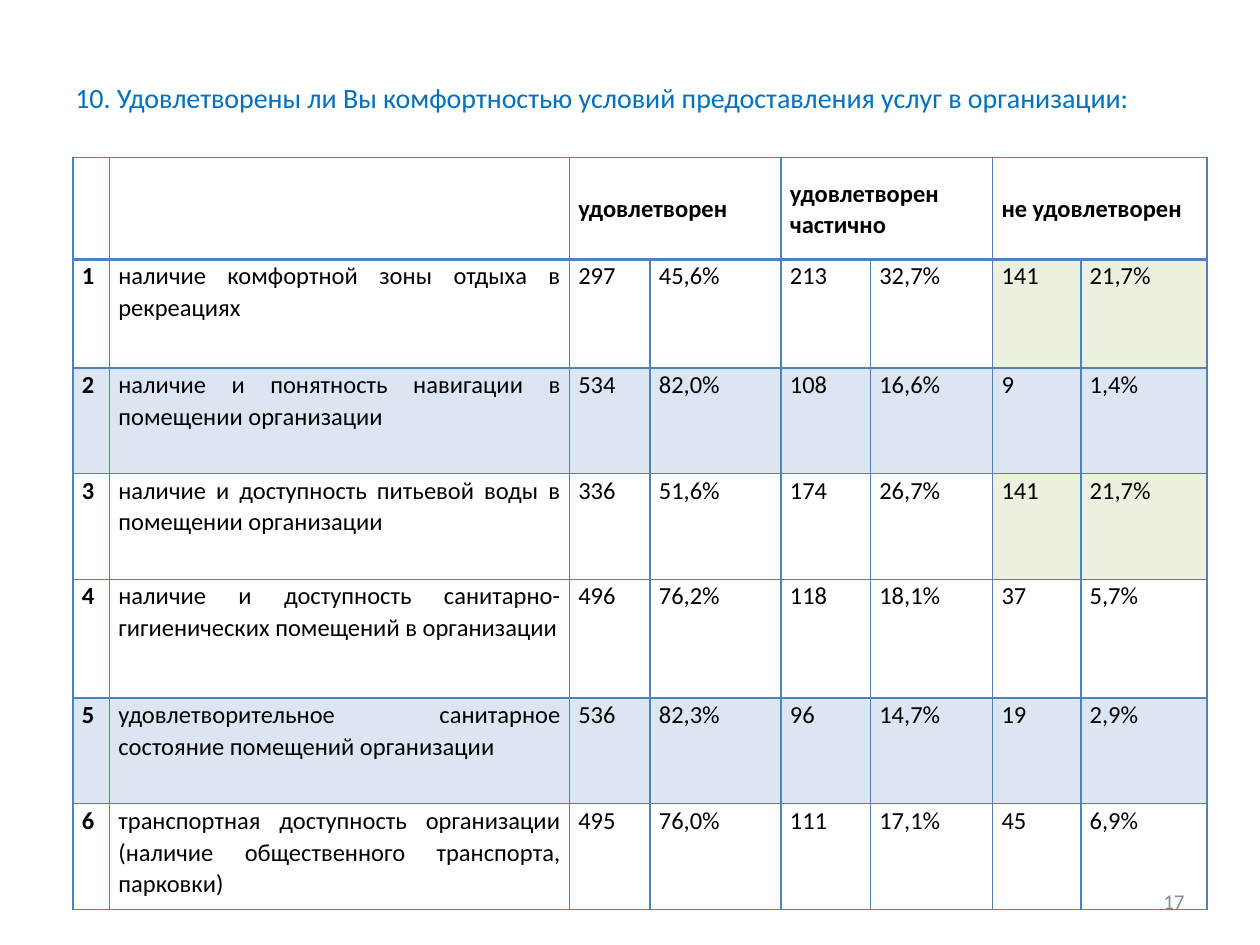
from dataclasses import dataclass

from lxml.etree import SubElement
from pptx import Presentation
from pptx.dml.color import RGBColor
from pptx.enum.text import MSO_ANCHOR, PP_ALIGN
from pptx.oxml.ns import qn
from pptx.util import Inches, Pt

FONT = "Calibri"
BLACK = "000000"
BORDER = "4F81BD"
BLUE_BAND = "DCE6F2"
GREEN_MARK = "EBF1DE"

COLUMN_WIDTHS = (0.29, 3.65, 0.64, 1.04, 0.71, 0.97, 0.7, 1)
ROW_HEIGHTS = (0.81, 0.86, 0.84, 0.84, 0.94, 0.84, 0.84)
ANSWERS = ("удовлетворен", "удовлетворен частично", "не удовлетворен")
FIRST_ANSWER_COLUMN = 2


@dataclass
class Criterion:
    name: str
    counts: tuple[int, int, int]
    band: str | None = None
    mark: str | None = None  # fill of the "not satisfied" cells


CRITERIA = (
    Criterion("наличие комфортной зоны отдыха в рекреациях",
              (297, 213, 141), mark=GREEN_MARK),
    Criterion("наличие и понятность навигации в помещении организации",
              (534, 108, 9), band=BLUE_BAND),
    Criterion("наличие и доступность питьевой воды в помещении организации",
              (336, 174, 141), mark=GREEN_MARK),
    Criterion("наличие и доступность санитарно-гигиенических помещений в организации",
              (496, 118, 37)),
    Criterion("удовлетворительное санитарное состояние помещений организации",
              (536, 96, 19), band=BLUE_BAND),
    Criterion("транспортная доступность организации (наличие общественного транспорта, парковки)",
              (495, 111, 45)),
)


def color(value: str) -> RGBColor:
    return RGBColor.from_string(value)


def add_span(para, text: str, size: float, tint: str, bold: bool = False) -> None:
    span = para.add_run()
    span.text = text
    span.font.name = FONT
    span.font.size = Pt(size)
    span.font.bold = bold
    span.font.color.rgb = color(tint)


def add_text_box(page, left: float, top: float, width: float, height: float,
                 text: str, size: float, tint: str, alignment) -> None:
    box = page.shapes.add_textbox(Inches(left), Inches(top), Inches(width), Inches(height))
    frame = box.text_frame
    frame.word_wrap = True
    frame.vertical_anchor = MSO_ANCHOR.MIDDLE
    para = frame.paragraphs[0]
    para.alignment = alignment
    add_span(para, text, size, tint)


def set_borders(cell, top: float = 1, bottom: float = 1) -> None:
    properties = cell._tc.get_or_add_tcPr()
    for side, width in (("L", 1), ("R", 1), ("T", top), ("B", bottom)):
        line = SubElement(properties, qn(f"a:ln{side}"), w=str(Pt(width)))
        fill = SubElement(line, qn("a:solidFill"))
        SubElement(fill, qn("a:srgbClr"), val=BORDER)


def set_fill(cell, tint: str | None) -> None:
    if tint:
        cell.fill.solid()
        cell.fill.fore_color.rgb = color(tint)
    else:
        cell.fill.background()


def write_cell(cell, text: str, bold: bool = False, anchor=MSO_ANCHOR.TOP) -> None:
    cell.margin_left = cell.margin_right = Inches(0.07)
    cell.margin_top = cell.margin_bottom = 0
    cell.vertical_anchor = anchor
    para = cell.text_frame.paragraphs[0]
    para.alignment = PP_ALIGN.JUSTIFY
    para.line_spacing = 1.07
    para.space_after = Pt(8)
    add_span(para, text, 14, BLACK, bold)


def fill_header(table) -> None:
    for cell in table.rows[0].cells:
        set_borders(cell, bottom=2)
        set_fill(cell, None)
    for index, answer in enumerate(ANSWERS):
        column = FIRST_ANSWER_COLUMN + 2 * index
        cell = table.cell(0, column)
        cell.merge(table.cell(0, column + 1))
        write_cell(cell, answer, bold=True, anchor=MSO_ANCHOR.MIDDLE)


def fill_criterion(table, number: int, criterion: Criterion) -> None:
    total = sum(criterion.counts)
    texts = [str(number), criterion.name]
    for count in criterion.counts:
        share = f"{100 * count / total:.1f}%".replace(".", ",")
        texts += [str(count), share]
    marked_from = len(texts) - 2
    for column, text in enumerate(texts):
        cell = table.cell(number, column)
        set_borders(cell, top=2 if number == 1 else 1)
        marked = criterion.mark and column >= marked_from
        set_fill(cell, criterion.mark if marked else criterion.band)
        write_cell(cell, text, bold=column == 0)


def add_results_table(page) -> None:
    frame = page.shapes.add_table(len(ROW_HEIGHTS), len(COLUMN_WIDTHS),
                                  Inches(0.58), Inches(1.25), Inches(9), Inches(5.95))
    table = frame.table
    for column, width in zip(table.columns, COLUMN_WIDTHS):
        column.width = Inches(width)
    for row, height in zip(table.rows, ROW_HEIGHTS):
        row.height = Inches(height)
    fill_header(table)
    for number, criterion in enumerate(CRITERIA, start=1):
        fill_criterion(table, number, criterion)


def main() -> None:
    deck = Presentation()
    deck.slide_width, deck.slide_height = Inches(10), Inches(7.5)
    page = deck.slides.add_slide(deck.slide_layouts[6])

    # Question
    add_text_box(page, 0.5, 0.3, 9, 0.95,
                 "10. Удовлетворены ли Вы комфортностью условий предоставления услуг в организации:",
                 16, "0070C0", PP_ALIGN.JUSTIFY)
    # Page number
    add_text_box(page, 7.17, 6.95, 2.33, 0.4, "17", 12, "8C8C8C", PP_ALIGN.RIGHT)
    # Survey results
    add_results_table(page)

    deck.save("out.pptx")


if __name__ == "__main__":
    main()
